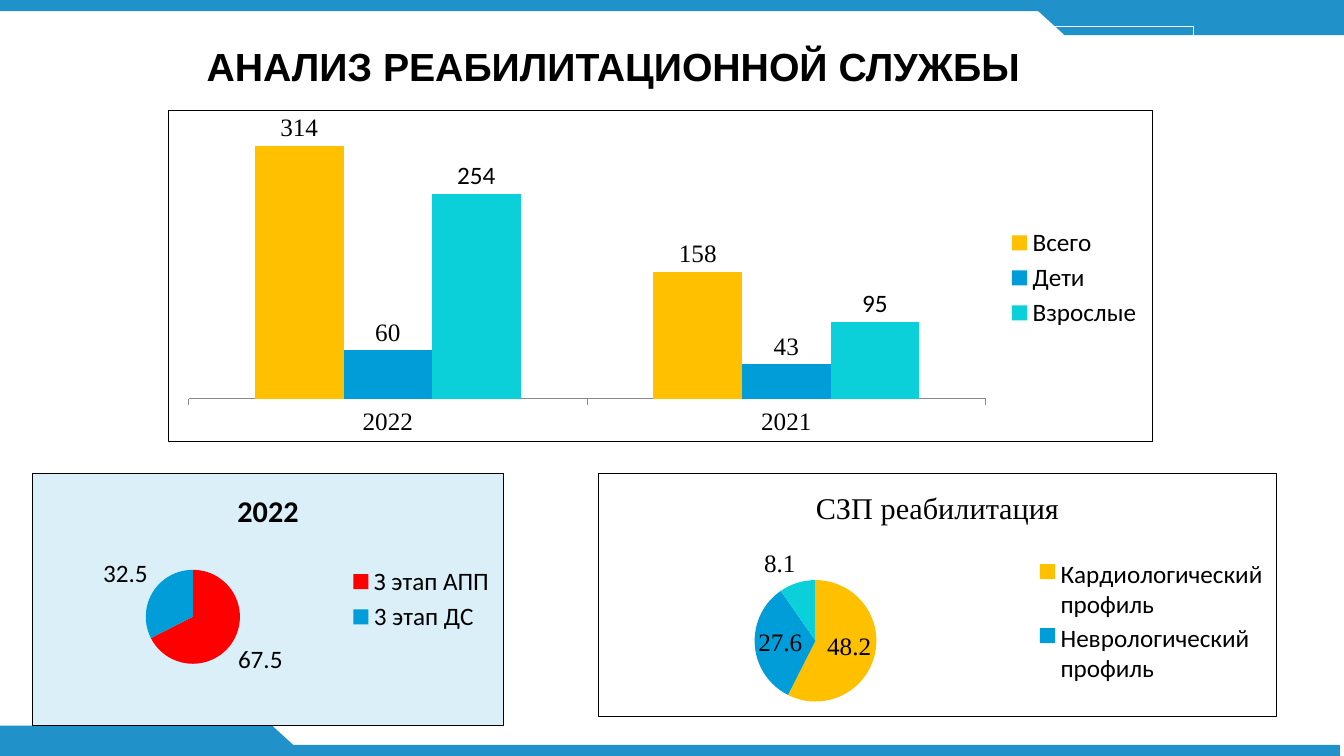
import pptx
import pptx.util
import pptx.chart.data
import pptx.dml.color
import pptx.enum.chart
import pptx.enum.shapes
import pptx.enum.text
import pptx.oxml
import pptx.oxml.ns

Inches, Pt = pptx.util.Inches, pptx.util.Pt
KIND = pptx.enum.chart.XL_CHART_TYPE
SPOT = pptx.enum.chart.XL_LABEL_POSITION
FORM = pptx.enum.shapes.MSO_SHAPE

THEME = {
    "band": "2191C9", "gold": "FFC000", "blue": "009DD9", "teal": "0BD0D9",
    "red": "FF0000", "pale": "DBEFF9", "ink": "000000", "white": "FFFFFF",
    "axis": "898989", "head": 28, "sub": 21.6, "body": 18,
    "sans": "Arial", "text": "Calibri", "serif": "Times New Roman",
}

TITLE = "АНАЛИЗ РЕАБИЛИТАЦИОННОЙ СЛУЖБЫ"
# shape, place, rotation
BANDS = [
    (FORM.RECTANGLE, (0, 0, 13.33, 0.11), 0),
    (FORM.RECTANGLE, (-0.04, 7.39, 13.33, 0.11), 0),
    (FORM.RECTANGLE, (10.55, 0.05, 2.78, 0.3), 0),
    (FORM.FLOWCHART_MERGE, (10.22, 0.04, 0.66, 0.3), 0),
    (FORM.RECTANGLE, (-0.08, 7.2, 2.78, 0.3), 0),
    (FORM.FLOWCHART_MERGE, (2.37, 7.2, 0.66, 0.3), 180),
]
# name, values, colour, label font
YEARS = ["2022", "2021"]
GROUPS = [
    ("Всего", (314, 158), "gold", "serif"),
    ("Дети", (60, 43), "blue", "serif"),
    ("Взрослые", (254, 95), "teal", "text"),
]
# plot and legend are shares of the chart frame: left, top, width, height
BAR = {"at": (1.67, 1.09, 9.77, 3.3), "plot": (0.02, 0.02, 0.81, 0.85),
       "legend": (0.85, 0.34, 0.14, 0.33)}
# a part without a name has no legend entry
PIES = [
    {"at": (0.32, 4.69, 4.68, 2.51), "plot": (0.24, 0.38, 0.2, 0.38),
     "legend": (0.66, 0.35, 0.33, 0.3), "title": "2022", "bold": True,
     "font": "text", "fill": "pale",
     "parts": [("З этап АПП", 67.5, "red"), ("3 этап ДС", 32.5, "blue")]},
    {"at": (5.93, 4.69, 6.74, 2.42), "plot": (0.23, 0.44, 0.18, 0.5),
     "legend": (0.64, 0.34, 0.35, 0.54), "title": "СЗП реабилитация",
     "bold": False, "font": "serif", "fill": None,
     "parts": [("Кардиологический профиль", 48.2, "gold"),
               ("Неврологический профиль", 27.6, "blue"),
               ("", 8.1, "teal")]},
]


def tint(name):
    return pptx.dml.color.RGBColor.from_string(THEME[name])


def paint(fill, name):
    fill.solid()
    fill.fore_color.rgb = tint(name)


def style(font, size="body", face="text", bold=False):
    font.size, font.name, font.bold = Pt(THEME[size]), THEME[face], bold
    font.color.rgb = tint("ink")


def write(frame, text, align=None, lines=None, **look):
    para = frame.paragraphs[0]
    run = para.add_run()
    run.text = text
    para.alignment, para.line_spacing = align, lines
    style(run.font, **look)


def node(tag, inner=""):
    space = pptx.oxml.ns.nsdecls("c", "a")
    return pptx.oxml.parse_xml(f"<c:{tag} {space}>{inner}</c:{tag}>")


def layout(box, inner=False):
    """Make a manual layout from shares of the chart frame."""
    body = '<c:layoutTarget val="inner"/>' if inner else ""
    body += '<c:xMode val="edge"/><c:yMode val="edge"/>'
    body += "".join(f'<c:{k} val="{v}"/>' for k, v in zip("xywh", box))
    return node("layout", f"<c:manualLayout>{body}</c:manualLayout>")


def drop(root):
    """Remove any layout already set."""
    for old in root.findall(pptx.oxml.ns.qn("c:layout")):
        root.remove(old)


def draw(slide, kind, data, at, plot, legend, fill=None, hide=()):
    """Add a framed chart with a placed plot and legend."""
    chart = slide.shapes.add_chart(kind, *map(Inches, at), data).chart
    style(chart.font)
    chart.has_title = False
    chart.has_legend = True
    chart.legend.position = pptx.enum.chart.XL_LEGEND_POSITION.RIGHT
    chart.legend.include_in_layout = False
    root = chart.element.find(pptx.oxml.ns.qn("c:chart"))
    area = root.find(pptx.oxml.ns.qn("c:plotArea"))
    drop(area)
    area.insert(0, layout(plot, inner=True))
    key = root.find(pptx.oxml.ns.qn("c:legend"))
    drop(key)
    parts = [node("legendEntry", f'<c:idx val="{i}"/><c:delete val="1"/>')
             for i in hide] + [layout(legend)]
    for i, part in enumerate(parts, 1):
        key.insert(i, part)

    def solid(name):
        return f'<a:solidFill><a:srgbClr val="{THEME[name]}"/></a:solidFill>'
    back = solid(fill) if fill else "<a:noFill/>"
    root.addnext(node("spPr", f'{back}<a:ln w="9525">{solid("ink")}</a:ln>'))
    return chart


def label(series, spot, face):
    tags = series.data_labels
    tags.show_value = True
    tags.position = spot
    style(tags.font, face=face)


def bars(slide):
    data = pptx.chart.data.CategoryChartData()
    data.categories = YEARS
    for name, vals, *_ in GROUPS:
        data.add_series(name, vals)
    chart = draw(slide, KIND.COLUMN_CLUSTERED, data, **BAR)
    plot = chart.plots[0]
    plot.gap_width, plot.overlap, plot.vary_by_categories = 150, 0, False
    for series, (_, _, hue, face) in zip(plot.series, GROUPS):
        paint(series.format.fill, hue)
        label(series, SPOT.OUTSIDE_END, face)
    axis = chart.category_axis
    axis.major_tick_mark = pptx.enum.chart.XL_TICK_MARK.OUTSIDE
    axis.format.line.color.rgb = tint("axis")
    style(axis.tick_labels.font, face="serif")
    scale = chart.value_axis
    scale.minimum_scale, scale.maximum_scale = 0, 350
    scale.has_major_gridlines = False
    scale.visible = False


def pie(slide, title, font, bold, parts, **place):
    names, vals, hues = zip(*parts)
    data = pptx.chart.data.CategoryChartData()
    data.categories = names
    data.add_series(title, vals)
    hide = [i for i, name in enumerate(names) if not name]
    chart = draw(slide, KIND.PIE, data, hide=hide, **place)
    chart.has_title = True
    write(chart.chart_title.text_frame, title, size="sub", face=font, bold=bold)
    chart.plots[0].vary_by_categories = True
    series = chart.plots[0].series[0]
    for i, hue in enumerate(hues):
        paint(series.points[i].format.fill, hue)
    label(series, SPOT.BEST_FIT, font)


def main():
    deck = pptx.Presentation()
    deck.slide_width, deck.slide_height = Inches(13.33), Inches(7.5)
    slide = deck.slides.add_slide(deck.slide_layouts[6])
    for form, at, turn in BANDS:
        band = slide.shapes.add_shape(form, *map(Inches, at))
        band.shadow.inherit = False
        band.rotation = turn
        paint(band.fill, "band")
        band.line.fill.background()
    head = slide.shapes.add_textbox(*map(Inches, (0.32, 0.26, 11.52, 0.84)))
    head.line.color.rgb, head.line.width = tint("white"), Pt(0.75)
    head.text_frame.word_wrap = True
    head.text_frame.vertical_anchor = pptx.enum.text.MSO_ANCHOR.MIDDLE
    write(head.text_frame, TITLE, align=pptx.enum.text.PP_ALIGN.CENTER,
          lines=0.9, size="head", face="sans", bold=True)
    bars(slide)
    for item in PIES:
        pie(slide, **item)
    deck.save("out.pptx")


if __name__ == "__main__":
    main()
